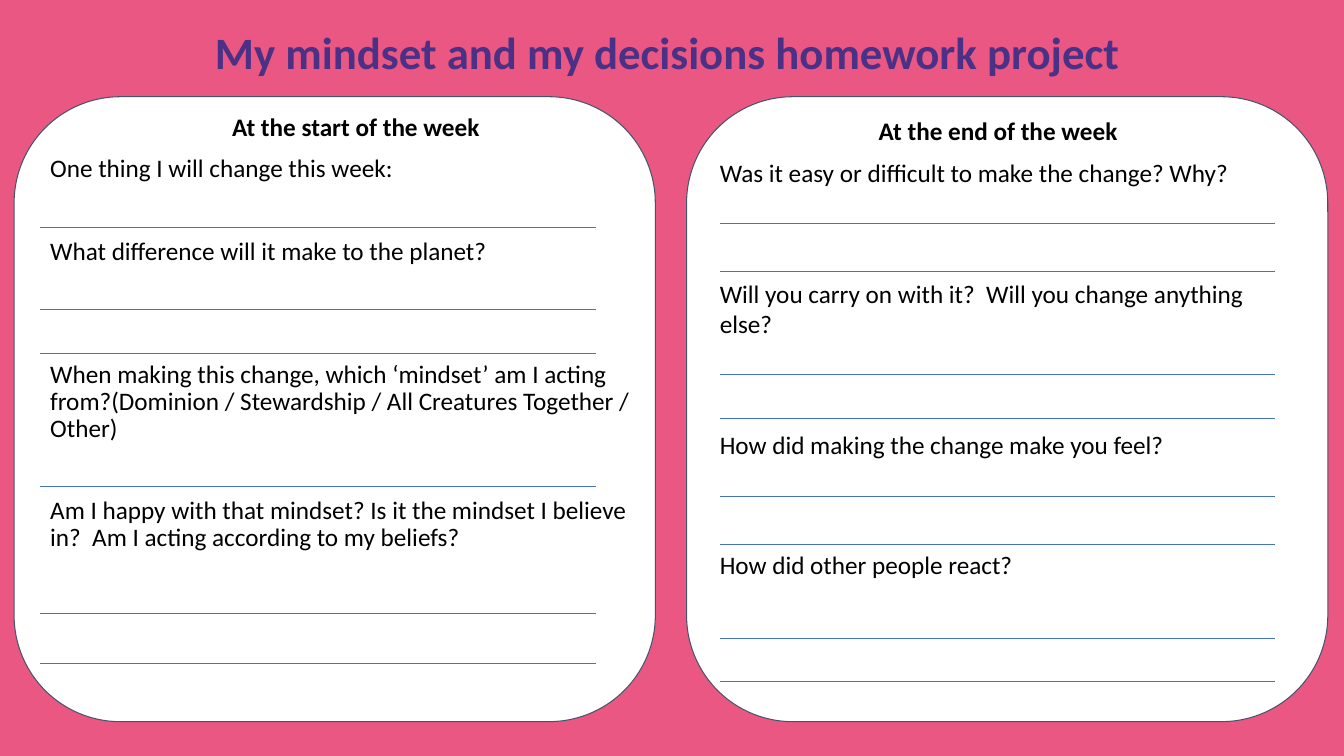
import pptx
import pptx.util
import pptx.dml.color
import pptx.enum.shapes
import pptx.enum.text

PX = 9144
theme = {
    "font": "Calibri", "back": "EA5783", "title": "4B3186", "ink": "000000",
    "card": "FFFFFF", "edge": "44546A", "rule": "4472C4",
    "big": 32, "body": 18, "thin": 0.75,
}
align = pptx.enum.text.PP_ALIGN
Pt = pptx.util.Pt


def color(name):
    return pptx.dml.color.RGBColor.from_string(theme[name])


def write(box, items, size, ink, lead):
    frame = box.text_frame
    frame.word_wrap = True
    for i, (text, gap, head) in enumerate(items):
        para = frame.add_paragraph() if i else frame.paragraphs[0]
        para.alignment = align.CENTER if head else align.LEFT
        para.line_spacing = lead
        para.space_before = Pt(gap)
        run = para.add_run()
        run.text = text
        run.font.name = theme["font"]
        run.font.size = Pt(theme[size])
        run.font.bold = head
        run.font.color.rgb = color(ink)


deck = pptx.Presentation()
deck.slide_width = 1333 * PX
deck.slide_height = 750 * PX
slide = deck.slides.add_slide(deck.slide_layouts[6])
slide.background.fill.solid()
slide.background.fill.fore_color.rgb = color("back")
shapes = slide.shapes

for left in (681, 14):
    card = shapes.add_shape(
        pptx.enum.shapes.MSO_SHAPE.ROUNDED_RECTANGLE,
        left * PX, 96 * PX, 636 * PX, 620 * PX)
    card.shadow.inherit = False
    card.adjustments[0] = 0.17
    card.fill.solid()
    card.fill.fore_color.rgb = color("card")
    card.line.color.rgb = color("edge")
    card.line.width = Pt(theme["thin"])

title = shapes.add_textbox(62 * PX, 1 * PX, 1200 * PX, 108 * PX)
title.text_frame.vertical_anchor = pptx.enum.text.MSO_ANCHOR.MIDDLE
write(title, [("My mindset and my decisions homework project", 0, True)],
      "big", "title", 0.9)

start = [
    ("At the start of the week", 0, True),
    ("One thing I will change this week:", 10, False),
    ("What difference will it make to the planet?", 39.5, False),
    ("When making this change, which ‘mindset’ am I acting from?"
     "(Dominion / Stewardship / All Creatures Together / Other)", 68.5, False),
    ("Am I happy with that mindset? Is it the mindset I believe in?  "
     "Am I acting according to my beliefs?", 39, False),
]
end = [
    ("At the end of the week", 0, True),
    ("Was it easy or difficult to make the change? Why?", 9, False),
    ("Will you carry on with it?  Will you change anything else?", 64.5, False),
    ("How did making the change make you feel?", 64.5, False),
    ("How did other people react?", 64.5, False),
]
for left, wide, high, items, lead in (
        (40, 626, 607, start, 0.9), (704, 572, 525, end, 1.0)):
    box = shapes.add_textbox(left * PX, 109 * PX, wide * PX, high * PX)
    write(box, items, "body", "ink", lead)

rules = {
    40: (226, 307, 351, 483, 609, 658),
    714: (222, 269, 372, 415, 493, 540, 633, 676),
}
for left, tops in rules.items():
    for top in tops:
        rule = shapes.add_connector(
            pptx.enum.shapes.MSO_CONNECTOR.STRAIGHT,
            left * PX, top * PX, (left + 551) * PX, top * PX)
        rule.line.color.rgb = color("rule")
        rule.line.width = Pt(theme["thin"])
        rule._element.spPr.append(pptx.oxml.parse_xml(
            '<a:effectLst xmlns:a="http://schemas.openxmlformats.org/drawingml/2006/main"/>'))

deck.save("out.pptx")
